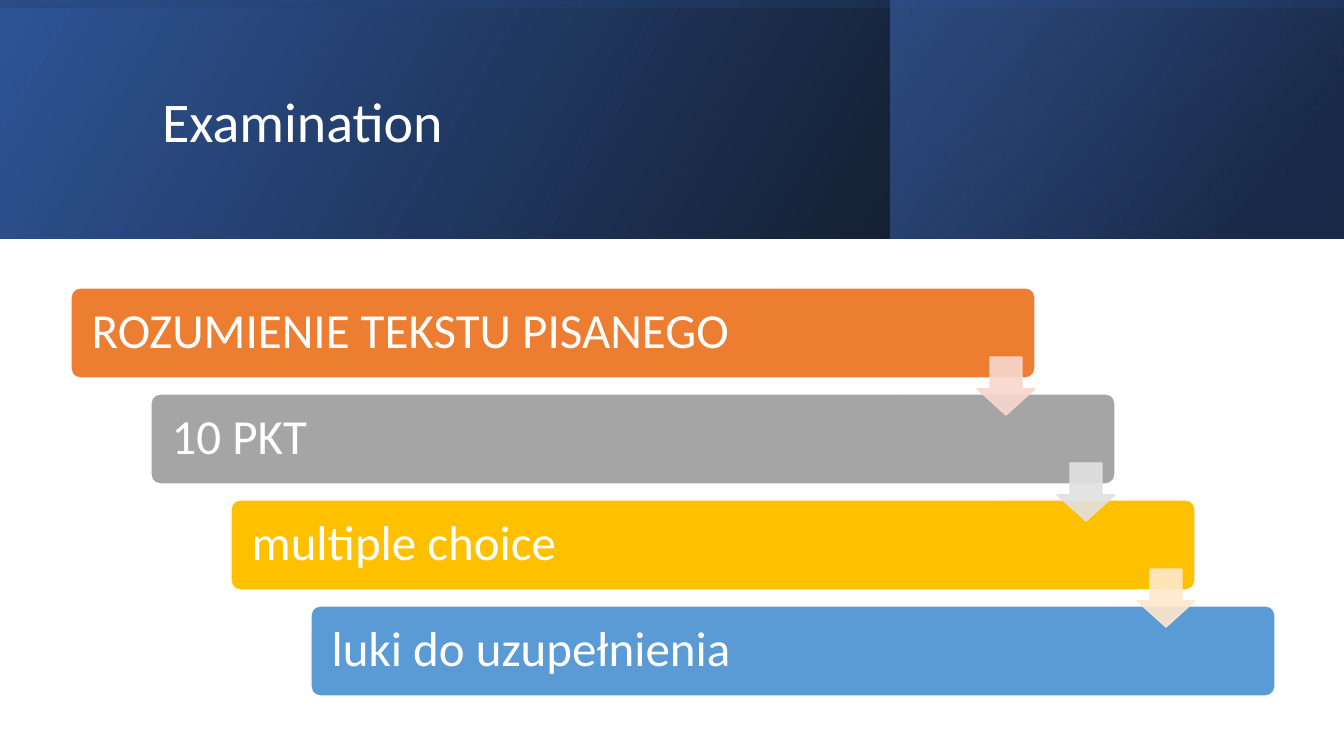
from pptx import Presentation
from pptx.dml.color import RGBColor
from pptx.enum.shapes import MSO_SHAPE
from pptx.enum.text import MSO_ANCHOR, MSO_AUTO_SIZE, PP_ALIGN
from pptx.oxml import parse_xml
from pptx.oxml.ns import nsdecls, qn
from pptx.util import Pt

RECTANGLE = MSO_SHAPE.RECTANGLE
ROUNDED = MSO_SHAPE.ROUNDED_RECTANGLE
DOWN_ARROW = MSO_SHAPE.DOWN_ARROW
MIDDLE = MSO_ANCHOR.MIDDLE
LEFT = PP_ALIGN.LEFT
NO_AUTOFIT = MSO_AUTO_SIZE.NONE

WHITE = RGBColor(0xFF, 0xFF, 0xFF)
BLACK = RGBColor(0x00, 0x00, 0x00)
DEEP_BLUE = RGBColor(0x2F, 0x55, 0x97)
NAVY = RGBColor(0x20, 0x38, 0x64)
BLUE = RGBColor(0x44, 0x72, 0xC4)
ORANGE = RGBColor(0xED, 0x7D, 0x31)
GREY = RGBColor(0xA5, 0xA5, 0xA5)
GOLD = RGBColor(0xFF, 0xC0, 0x00)
SKY = RGBColor(0x5B, 0x9B, 0xD5)
PALE_ORANGE = RGBColor(0xF8, 0xD7, 0xCE)
PALE_GREY = RGBColor(0xE1, 0xE1, 0xE1)
PALE_GOLD = RGBColor(0xFF, 0xE8, 0xCC)

# Content
TITLE = "Examination"
STEPS = [
    ("ROZUMIENIE TEKSTU PISANEGO", ORANGE),
    ("10 PKT", GREY),
    ("multiple choice", GOLD),
    ("luki do uzupełnienia", SKY),
]
ARROW_COLOURS = [PALE_ORANGE, PALE_GREY, PALE_GOLD]

# Header bands: box, rotation, gradient angle, stops (position, colour, opacity)
BANDS = [
    ((0, 0, 1344, 239), 0, 330, [(0, BLACK, 96), (100, DEEP_BLUE, 100)]),
    ((891, 0, 452, 239), 0, 320, [(19, NAVY, 68), (100, BLUE, 48)]),
    ((552, -552, 239, 1344), 270, 350, [(23, DEEP_BLUE, 16), (99, BLACK, 45)]),
]

# Layout in px
PAGE_WIDTH, PAGE_HEIGHT = 1344, 756
TITLE_BOX = (152, 38, 1072, 173)
BAR_LEFT, BAR_TOP, BAR_WIDTH, BAR_HEIGHT = 71, 288, 964, 90
STEP_X, STEP_Y = 80, 106
ARROW_DX, ARROW_DY, ARROW_SIZE = 906, 69, 58
TEXT_INSET = 18
ARROW_OPACITY = 90


def px(length):
    return round(length * 914400 / 100.8)


def add_shape(page, kind, box, adjustments=()):
    shape = page.shapes.add_shape(kind, *map(px, box))
    shape.shadow.inherit = False
    for index, value in enumerate(adjustments):
        shape.adjustments[index] = value
    return shape


def paint(shape, fill, line):
    shape.fill.solid()
    shape.fill.fore_color.rgb = fill
    shape.line.color.rgb = line
    shape.line.width = Pt(1)


def write(shape, text, size, colour, inset=None):
    frame = shape.text_frame
    frame.word_wrap = True
    frame.auto_size = NO_AUTOFIT
    frame.vertical_anchor = MIDDLE
    if inset is not None:
        frame.margin_left = frame.margin_right = px(inset)
    para = frame.paragraphs[0]
    para.alignment = LEFT
    para.line_spacing = 0.9
    span = para.add_run()
    span.text = text
    span.font.name = "Calibri"
    span.font.size = Pt(size)
    span.font.color.rgb = colour


def set_gradient(shape, angle, stops):
    stop_xml = "".join(
        f'<a:gs pos="{position * 1000}"><a:srgbClr val="{colour}">'
        f'<a:alpha val="{opacity * 1000}"/></a:srgbClr></a:gs>'
        for position, colour, opacity in stops
    )
    gradient = parse_xml(
        f'<a:gradFill {nsdecls("a")} rotWithShape="1"><a:gsLst>{stop_xml}</a:gsLst>'
        f'<a:lin ang="{angle * 60000}" scaled="0"/></a:gradFill>'
    )
    shape.element.spPr.find(qn("a:prstGeom")).addnext(gradient)


def set_opacity(shape, percent):
    for colour in shape.element.spPr.iter(qn("a:srgbClr")):
        colour.append(parse_xml(f'<a:alpha {nsdecls("a")} val="{percent * 1000}"/>'))


def main():
    deck = Presentation()
    deck.slide_width, deck.slide_height = px(PAGE_WIDTH), px(PAGE_HEIGHT)
    page = deck.slides.add_slide(deck.slide_layouts[5])

    # Header bands
    for box, rotation, angle, stops in BANDS:
        band = add_shape(page, RECTANGLE, box)
        band.rotation = rotation
        band.line.fill.background()
        band.element.spPr.find(qn("a:xfrm")).set("flipH", "1")
        set_gradient(band, angle, stops)

    # Title, in front of the bands
    title = page.shapes.title
    title.left, title.top, title.width, title.height = map(px, TITLE_BOX)
    write(title, TITLE, 40, WHITE)
    page.shapes.element.append(title.element)

    # Staircase of bars
    for index, (text, colour) in enumerate(STEPS):
        left, top = BAR_LEFT + index * STEP_X, BAR_TOP + index * STEP_Y
        bar = add_shape(page, ROUNDED, (left, top, BAR_WIDTH, BAR_HEIGHT), [0.1])
        paint(bar, colour, WHITE)
        write(bar, text, 35, WHITE, inset=TEXT_INSET)

    # Arrows from each bar to the next
    for index, colour in enumerate(ARROW_COLOURS):
        left = BAR_LEFT + index * STEP_X + ARROW_DX
        top = BAR_TOP + index * STEP_Y + ARROW_DY
        arrow = add_shape(page, DOWN_ARROW, (left, top, ARROW_SIZE, ARROW_SIZE), [0.55, 0.45])
        paint(arrow, colour, colour)
        set_opacity(arrow, ARROW_OPACITY)

    deck.save("out.pptx")


if __name__ == "__main__":
    main()
